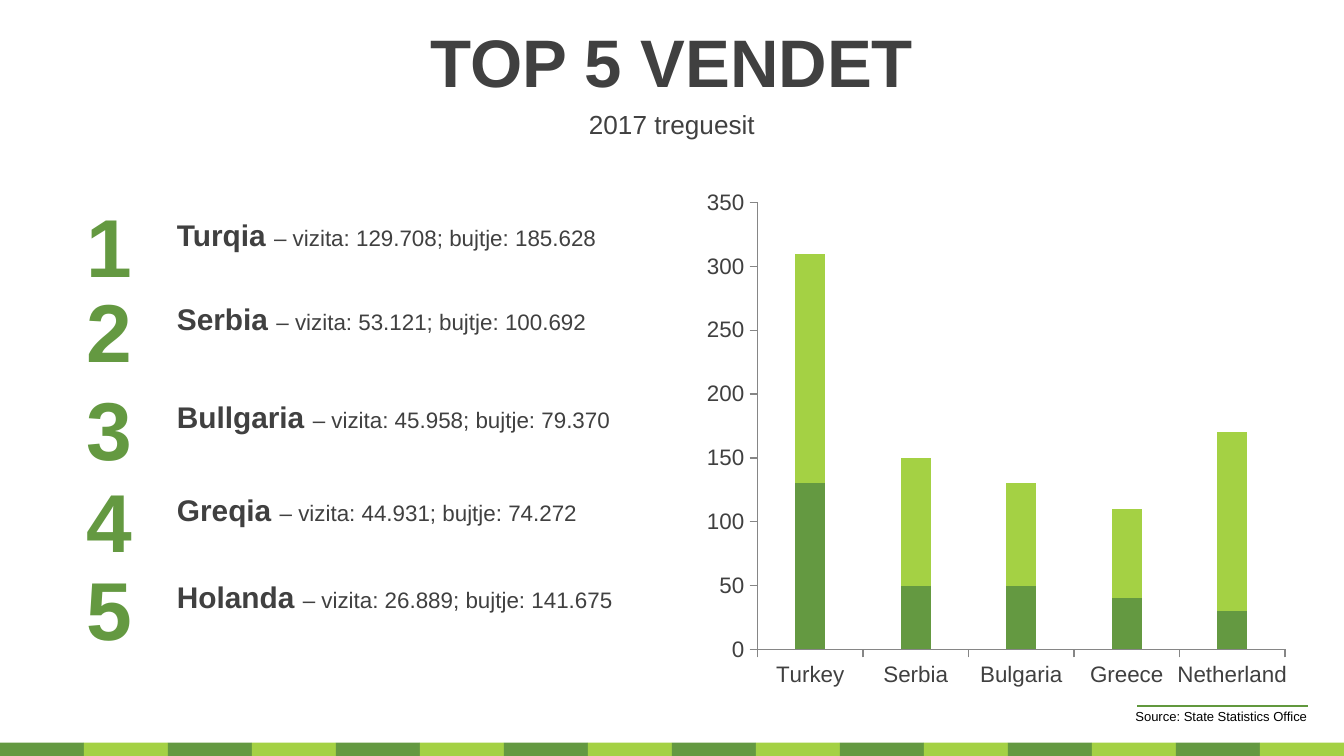
from lxml.etree import SubElement
from pptx import Presentation
from pptx.chart.data import CategoryChartData
from pptx.dml.color import RGBColor
from pptx.enum.chart import XL_CHART_TYPE, XL_TICK_MARK
from pptx.enum.shapes import MSO_CONNECTOR, MSO_SHAPE
from pptx.enum.text import MSO_ANCHOR, PP_ALIGN
from pptx.oxml import parse_xml
from pptx.oxml.ns import nsdecls, qn
from pptx.util import Inches, Pt

W = 10
H = W * 9 / 16
FONT = "Arial"
GREEN = RGBColor(0x64, 0x99, 0x41)
LIME = RGBColor(0xA4, 0xD1, 0x44)
RULE = RGBColor(0x61, 0x98, 0x3D)
DARK = RGBColor(0x40, 0x40, 0x40)
BLACK = RGBColor(0, 0, 0)
AXIS = RGBColor(0x86, 0x86, 0x86)

COUNTRIES = [
    (0, "Turqia", "– vizita: 129.708; bujtje: 185.628"),
    (0.63, "Serbia", "– vizita: 53.121; bujtje: 100.692"),
    (1.36, "Bullgaria", "– vizita: 45.958; bujtje: 79.370"),
    (2.05, "Greqia", "– vizita: 44.931; bujtje: 74.272"),
    (2.7, "Holanda", "– vizita: 26.889; bujtje: 141.675"),
]
CATEGORIES = ["Turkey", "Serbia", "Bulgaria", "Greece", "Netherland"]
SERIES = [
    ("Series 1", (130, 50, 50, 40, 30), GREEN),
    ("Series 2", (180, 100, 80, 70, 140), LIME),
]
PLOT = {"x": 0.09, "y": 0.05, "w": 0.89, "h": 0.88}


def add_text(s, box, runs, align=PP_ALIGN.LEFT, anchor=MSO_ANCHOR.TOP, wrap=True):
    tf = s.shapes.add_textbox(*map(Inches, box)).text_frame
    tf.word_wrap = wrap
    tf.vertical_anchor = anchor
    p = tf.paragraphs[0]
    p.alignment = align
    for text, size, bold, color in runs:
        r = p.add_run()
        r.text = text
        r.font.name = FONT
        r.font.size = Pt(size)
        r.font.bold = bold
        r.font.color.rgb = color


def add_footer_band(s, box, count=16):
    x, y, w, h = box
    step = w / count
    for i in range(count):
        sp = s.shapes.add_shape(
            MSO_SHAPE.RECTANGLE, *map(Inches, (x + i * step, y, step, h)))
        sp.shadow.inherit = False
        sp.fill.solid()
        sp.fill.fore_color.rgb = (GREEN, LIME)[i % 2]
        sp.line.fill.background()


def add_heading(s, box):
    x, y, w, h = box
    title_h = h * 2 / 3
    add_text(s, (x, y, w, title_h), [("TOP 5 VENDET", 36, True, DARK)],
             PP_ALIGN.CENTER, MSO_ANCHOR.MIDDLE)
    add_text(s, (x, y + title_h, w, h - title_h), [("2017 treguesit", 14, False, DARK)],
             PP_ALIGN.CENTER, MSO_ANCHOR.MIDDLE)


def add_ranking(s, box):
    x, y, w, h = box
    number_w = w / 4
    row_h = h * 0.24
    label_x = number_w * 0.83
    for rank, (offset, name, figures) in enumerate(COUNTRIES, 1):
        top = y + offset
        add_text(s, (x, top, number_w, row_h), [(str(rank), 44, True, GREEN)],
                 PP_ALIGN.CENTER, MSO_ANCHOR.MIDDLE)
        add_text(s, (x + label_x, top + 0.16, w - label_x, 0.37),
                 [(f"{name} ", 16, True, DARK), (figures, 12, False, DARK)])


def add_visits_chart(s, box):
    data = CategoryChartData()
    data.categories = CATEGORIES
    for name, values, _ in SERIES:
        data.add_series(name, values)
    chart = s.shapes.add_chart(
        XL_CHART_TYPE.COLUMN_STACKED, *map(Inches, box), data).chart
    chart.has_legend = False
    chart.has_title = False
    chart.font.name = FONT
    chart.font.size = Pt(12)
    chart.font.color.rgb = DARK
    plot = chart.plots[0]
    plot.gap_width = 250
    plot.overlap = 100
    plot.vary_by_categories = False
    for series, (_, _, color) in zip(plot.series, SERIES):
        series.format.fill.solid()
        series.format.fill.fore_color.rgb = color
    for axis in (chart.category_axis, chart.value_axis):
        axis.has_major_gridlines = False
        axis.major_tick_mark = XL_TICK_MARK.OUTSIDE
        axis.minor_tick_mark = XL_TICK_MARK.NONE
        axis.format.line.color.rgb = AXIS
        axis.format.line.width = Pt(0.75)
    chart.value_axis.minimum_scale = 0
    chart.value_axis.maximum_scale = 350
    chart.value_axis.major_unit = 50

    area = plot._element.getparent()
    for old in area.findall(qn("c:layout")):
        area.remove(old)
    layout = parse_xml(f"<c:layout {nsdecls('c')}><c:manualLayout/></c:layout>")
    settings = {"layoutTarget": "inner", "xMode": "edge", "yMode": "edge", **PLOT}
    for tag, value in settings.items():
        SubElement(layout[0], qn(f"c:{tag}")).set("val", str(value))
    area.insert(0, layout)


def add_source(s, box):
    x, y, w, h = box
    add_text(s, box, [("Source: State Statistics Office", 7, False, BLACK)], wrap=False)
    line = s.shapes.add_connector(
        MSO_CONNECTOR.STRAIGHT,
        *map(Inches, (x + 0.11, y + 0.03, x + w - 0.12, y + 0.03)))
    line.line.color.rgb = RULE
    line.line.width = Pt(1)
    SubElement(line._element.spPr, qn("a:effectLst"))


def main():
    prs = Presentation()
    prs.slide_width, prs.slide_height = Inches(W), Inches(H)
    s = prs.slides.add_slide(prs.slide_layouts[6])
    add_footer_band(s, (0, H - 0.1, W, 0.1))
    add_heading(s, (0, 0.14, W, 0.94))
    add_visits_chart(s, (5.24, 1.32, 4.41, 3.79))
    add_ranking(s, (0.21, 1.4, 4.86, 3.5))
    add_source(s, (8.35, 5.22, 1.5, 0.22))
    prs.save("out.pptx")


if __name__ == "__main__":
    main()
